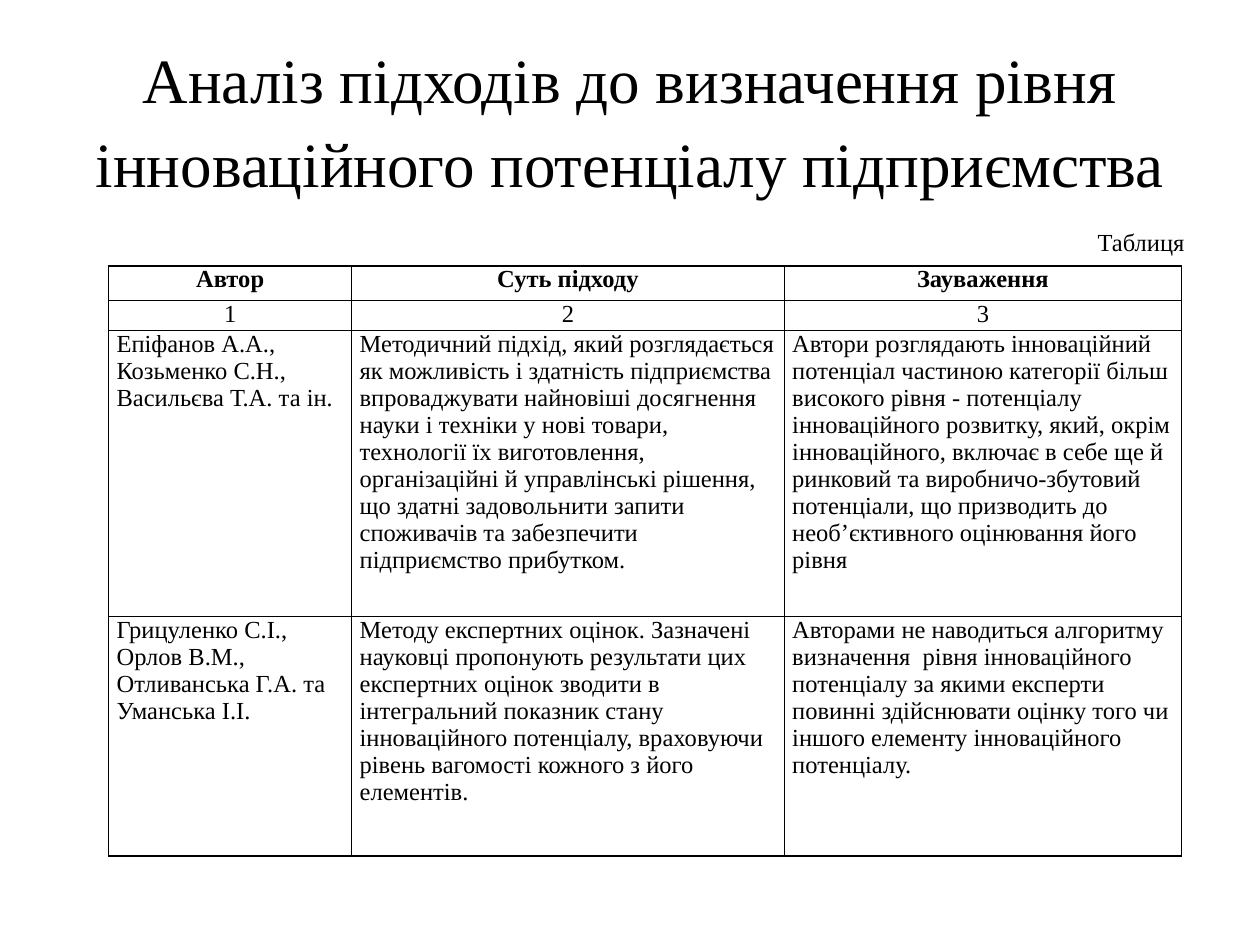
"""Build a slide with a table comparing approaches to innovation potential."""
from lxml.etree import SubElement
from pptx import Presentation
from pptx.dml.color import RGBColor
from pptx.enum.text import MSO_ANCHOR, PP_ALIGN
from pptx.oxml.ns import qn
from pptx.util import Cm, Pt

BLACK = RGBColor(0, 0, 0)
FONT = "Times New Roman"


def format_text(frame, size, align, bold=False):
    for paragraph in frame.paragraphs:
        paragraph.alignment = align
        for run in paragraph.runs:
            run.font.name = FONT
            run.font.size = Pt(size)
            run.font.bold = bold
            run.font.color.rgb = BLACK


def add_borders(cell):
    properties = cell._tc.get_or_add_tcPr()
    for position, side in enumerate(("lnL", "lnR", "lnT", "lnB")):
        line = SubElement(properties, qn(f"a:{side}"), w=str(Pt(1)))
        fill = SubElement(line, qn("a:solidFill"))
        SubElement(fill, qn("a:srgbClr"), val=str(BLACK))
        properties.insert(position, line)


presentation = Presentation()
presentation.slide_width = Cm(25.4)
presentation.slide_height = Cm(19.05)
slide = presentation.slides.add_slide(presentation.slide_layouts[6])

heading = slide.shapes.add_textbox(Cm(1.27), Cm(0.76), Cm(22.86), Cm(3.18)).text_frame
heading.word_wrap = True
heading.vertical_anchor = MSO_ANCHOR.MIDDLE
heading.text = "Аналіз підходів до визначення рівня інноваційного потенціалу підприємства"
heading.paragraphs[0].line_spacing = 1.1
format_text(heading, 36, PP_ALIGN.CENTER)

caption = slide.shapes.add_textbox(Cm(1.27), Cm(4.45), Cm(22.86), Cm(12.57)).text_frame
caption.word_wrap = True
caption.text = "Таблиця"
caption.paragraphs[0].space_before = Pt(2.8)
format_text(caption, 14, PP_ALIGN.RIGHT)

rows = [
    ("Автор", "Суть підходу", "Зауваження"),
    ("1", "2", "3"),
    (
        "Епіфанов А.А., Козьменко С.Н., Васильєва Т.А. та ін",
        "Методичний підхід, який розглядається як можливість і здатність "
        "підприємства впроваджувати найновіші досягнення науки і техніки у нові "
        "товари, технології їх виготовлення, організаційні й управлінські рішення, "
        "що здатні задовольнити запити споживачів та забезпечити підприємство "
        "прибутком.",
        "Автори розглядають інноваційний потенціал частиною категорії більш "
        "високого рівня - потенціалу інноваційного розвитку, який, окрім "
        "інноваційного, включає в себе ще й ринковий та виробничо-збутовий "
        "потенціали, що призводить до необ’єктивного оцінювання його рівня",
    ),
    (
        "Грицуленко С.І., Орлов В.М., Отливанська Г.А. та Уманська І.І.",
        "Методу експертних оцінок. Зазначені науковці пропонують результати цих "
        "експертних оцінок зводити в інтегральний показник стану інноваційного "
        "потенціалу, враховуючи рівень вагомості кожного з його елементів.",
        "Авторами не наводиться алгоритму визначення  рівня інноваційного "
        "потенціалу за якими експерти повинні здійснювати оцінку того чи іншого "
        "елементу інноваційного потенціалу.",
    ),
]
column_widths = [4.9, 8.72, 8.01]
row_heights = [0.7, 0.6, 5.77, 4.83]

approaches = slide.shapes.add_table(
    len(rows), len(column_widths), Cm(2.19), Cm(5.36),
    Cm(sum(column_widths)), Cm(sum(row_heights)),
).table
for column, width in zip(approaches.columns, column_widths):
    column.width = Cm(width)

for row_index, (entries, height) in enumerate(zip(rows, row_heights)):
    approaches.rows[row_index].height = Cm(height)
    for column_index, entry in enumerate(entries):
        cell = approaches.cell(row_index, column_index)
        cell.margin_left = cell.margin_right = Cm(0.16)
        cell.margin_top = cell.margin_bottom = 0
        cell.fill.background()
        add_borders(cell)
        cell.text_frame.text = entry
        if (row_index, column_index) == (2, 0):
            full_stop = cell.text_frame.paragraphs[0].add_run()
            full_stop.text = "."
            full_stop.font.italic = True
        align = PP_ALIGN.CENTER if row_index < 2 else PP_ALIGN.LEFT
        format_text(cell.text_frame, 14, align, bold=row_index == 0)

presentation.save("out.pptx")
